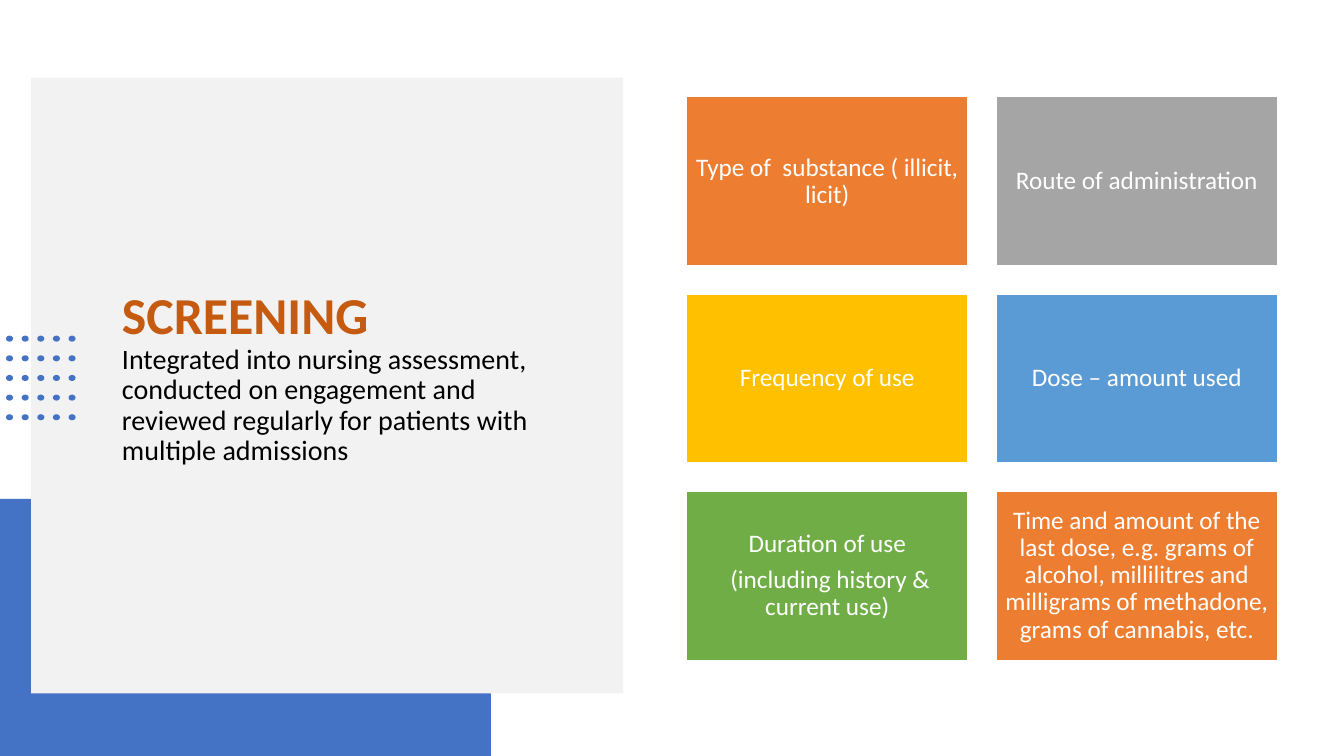
from pptx import Presentation
from pptx.dml.color import RGBColor
from pptx.enum.shapes import MSO_SHAPE as Shape
from pptx.enum.text import MSO_ANCHOR as Anchor, PP_ALIGN as Align
from pptx.util import Inches, Pt

# Content
HEADING = "SCREENING"
SUMMARY = ("Integrated into nursing assessment, conducted on engagement and "
           "reviewed regularly for patients with multiple admissions")
QUESTIONS = [
    ("orange", ["Type of  substance ( illicit, licit)"]),
    ("gray", ["Route of administration"]),
    ("gold", ["Frequency of use"]),
    ("sky", ["Dose – amount used"]),
    ("green", ["Duration of use", " (including history & current use)"]),
    ("orange", ["Time and amount of the last dose, e.g. grams of alcohol, "
                "millilitres and milligrams of methadone, grams of cannabis, etc."]),
]
COLORS = {
    "blue": "4472C4", "panel": "F2F2F2", "rust": "C55A11", "black": "000000",
    "white": "FFFFFF", "orange": "ED7D31", "gray": "A5A5A5", "gold": "FFC000",
    "sky": "5B9BD5", "green": "70AD47",
}

# Layout, in inches
CARD_LEFT, CARD_TOP, CARD_W, CARD_H = 6.81, 0.96, 2.79, 1.68
CARD_STEP_X, CARD_STEP_Y, CARD_COLUMNS = 3.07, 1.955, 2
DOT_LEFT, DOT_TOP, DOT_W, DOT_H = 0.06, 3.33, 0.07, 0.06
DOT_STEP_X, DOT_STEP_Y, DOTS_PER_SIDE = 0.155, 0.195, 5


def color(name):
    return RGBColor.from_string(COLORS[name])


def add_block(shapes, kind, box, fill, line=None):
    block = shapes.add_shape(kind, *map(Inches, box))
    block.shadow.inherit = False
    block.fill.solid()
    block.fill.fore_color.rgb = color(fill)
    if line:
        block.line.color.rgb = color(line)
        block.line.width = Pt(1)
    else:
        block.line.fill.background()
    return block


def write(paragraph, text, size=18, ink="white", bold=False, align=Align.CENTER, after=0):
    paragraph.alignment = align
    paragraph.line_spacing = 0.9
    paragraph.space_after = Pt(after)
    run = paragraph.add_run()
    run.text = text
    run.font.name = "Calibri"
    run.font.size = Pt(size)
    run.font.bold = bold
    run.font.color.rgb = color(ink)


prs = Presentation()
prs.slide_width, prs.slide_height = Inches(13.33), Inches(7.5)
slide = prs.slides.add_slide(prs.slide_layouts[5])
shapes = slide.shapes
title = shapes.title

# Corner block and panel, behind the title
add_block(shapes, Shape.RECTANGLE, (0, 4.95, 4.87, 2.55), "blue")
panel = add_block(shapes, Shape.RECTANGLE, (0.31, 0.77, 5.87, 6.11), "panel")
panel._element.addnext(title._element)

# Title
title.left, title.top, title.width, title.height = map(Inches, (1.11, 1.47, 4.59, 4.56))
title.text_frame.word_wrap = True
title.text_frame.vertical_anchor = Anchor.MIDDLE
statement = title.text_frame.paragraphs[0]
write(statement, HEADING, size=37, ink="rust", bold=True, align=Align.LEFT)
statement.add_line_break()
write(statement, SUMMARY, size=20, ink="black", align=Align.LEFT)

# Dot grid
dots = shapes.add_group_shape()
for i in range(DOTS_PER_SIDE ** 2):
    row, column = divmod(i, DOTS_PER_SIDE)
    box = (DOT_LEFT + column * DOT_STEP_X, DOT_TOP + row * DOT_STEP_Y, DOT_W, DOT_H)
    add_block(dots.shapes, Shape.OVAL, box, "blue")

# Question cards
cards = shapes.add_group_shape()
for i, (fill, lines) in enumerate(QUESTIONS):
    row, column = divmod(i, CARD_COLUMNS)
    box = (CARD_LEFT + column * CARD_STEP_X, CARD_TOP + row * CARD_STEP_Y, CARD_W, CARD_H)
    frame = add_block(cards.shapes, Shape.RECTANGLE, box, fill, line="white").text_frame
    frame.word_wrap = True
    frame.vertical_anchor = Anchor.MIDDLE
    frame.margin_left = frame.margin_right = Inches(0.07)
    frame.margin_top = frame.margin_bottom = Inches(0.07)
    for n, text in enumerate(lines):
        paragraph = frame.add_paragraph() if n else frame.paragraphs[0]
        write(paragraph, text, after=6.3)

prs.save("out.pptx")
